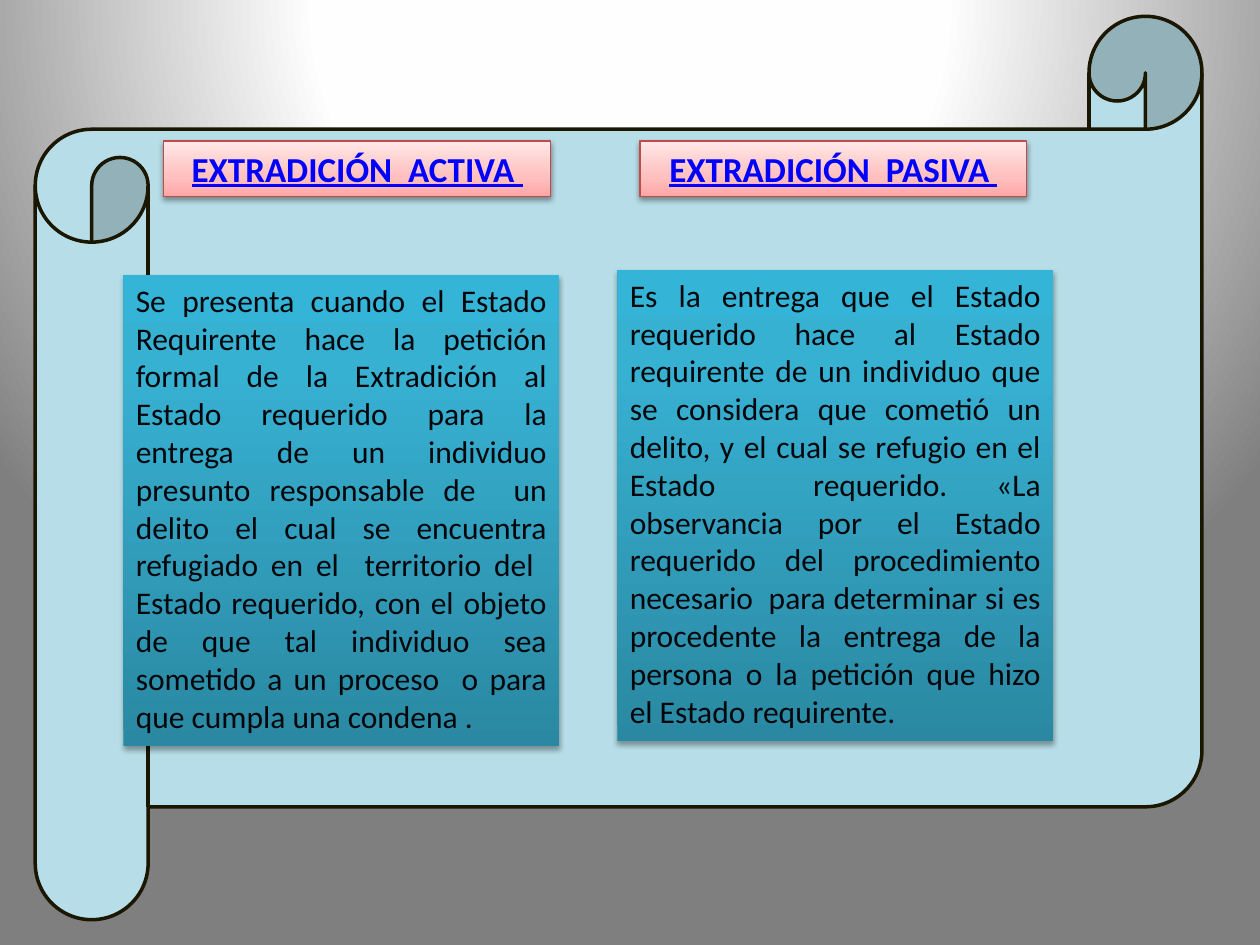
"""Build a slide that contrasts active and passive extradition on a scroll."""
from dataclasses import dataclass

from lxml.etree import SubElement
from pptx import Presentation
from pptx.dml.color import RGBColor
from pptx.enum.shapes import MSO_SHAPE
from pptx.enum.text import MSO_ANCHOR, MSO_AUTO_SIZE, PP_ALIGN
from pptx.oxml.ns import qn
from pptx.util import Inches, Pt


@dataclass(frozen=True)
class Theme:
    """Colours and type sizes of the slide."""
    font: str = "Calibri"
    heading_size: float = 20
    body_size: float = 18
    heading_color: str = "0000FF"
    heading_outline: str = "054697"
    body_color: str = "03070C"
    scroll_fill: str = "B7DEE8"
    scroll_line: str = "1A1600"
    heading_border: str = "BF4C48"
    shadow: str = "000000"
    backdrop: tuple = ((0, "FFFFFF"), (40, "FEFEFE"), (100, "7F7F7F"))
    heading_fill: tuple = ((0, "FFA6A5"), (35, "FFC0BF"), (100, "FFE7E7"))
    body_fill: tuple = ((0, "2A88A2"), (80, "37B1D2"), (100, "34B4D6"))


THEME = Theme()

ACTIVE = (
    "Se presenta cuando el Estado Requirente hace la petición formal de la "
    "Extradición al Estado requerido para la entrega de un individuo presunto "
    "responsable de  un delito el cual se encuentra refugiado en el  territorio "
    "del  Estado requerido, con el objeto de que tal individuo sea sometido a un "
    "proceso  o para que cumpla una condena . "
)
PASSIVE = (
    "Es la entrega que el Estado requerido hace al Estado requirente de un "
    "individuo que se considera que cometió un delito, y el cual se refugio en el "
    "Estado  requerido. «La observancia por el Estado requerido del procedimiento "
    "necesario  para determinar si es procedente la entrega de la persona o la "
    "petición que hizo el Estado requirente. "
)


def add_node(parent, tag, **attributes):
    """Append a DrawingML element and return it."""
    return SubElement(parent, qn(f"a:{tag}"), {k: str(v) for k, v in attributes.items()})


def set_gradient(fill, element, stops, circular=False):
    """Give a fill its colour stops, running upwards or around a circle."""
    fill.gradient()
    gradient = element.find(f".//{qn('a:gradFill')}")
    for child in list(gradient):
        gradient.remove(child)
    stop_list = add_node(gradient, "gsLst")
    for position, color in stops:
        add_node(add_node(stop_list, "gs", pos=position * 1000), "srgbClr", val=color)
    if circular:
        circle = add_node(gradient, "path", path="circle")
        add_node(circle, "fillToRect", l=50000, t=-80000, r=50000, b=180000)
    else:
        add_node(gradient, "lin", ang=270 * 60000, scaled=0)


def add_shadow(panel, opacity, distance):
    """Cast a soft shadow straight down."""
    effects = panel.element.spPr.find(qn("a:effectLst"))
    shadow = add_node(effects, "outerShdw", blurRad=Pt(3.1), dist=Pt(distance),
                      dir=90 * 60000, rotWithShape=0)
    color = add_node(shadow, "srgbClr", val=THEME.shadow)
    add_node(color, "alpha", val=opacity * 1000)


def add_outline(run, color):
    """Draw a thin line around the letters of a run."""
    properties = run.font._element
    outline = add_node(properties, "ln", w=Pt(1))
    add_node(add_node(outline, "solidFill"), "srgbClr", val=color)
    properties.insert(0, outline)


def write_text(panel, text, *, size, color, align, bold=False, underline=False, outline=None):
    """Write one formatted paragraph in a panel."""
    frame = panel.text_frame
    frame.word_wrap = True
    frame.auto_size = MSO_AUTO_SIZE.SHAPE_TO_FIT_TEXT
    frame.vertical_anchor = MSO_ANCHOR.TOP
    paragraph = frame.paragraphs[0]
    paragraph.alignment = align
    run = paragraph.add_run()
    run.text = text
    run.font.name = THEME.font
    run.font.size = Pt(size)
    run.font.bold = bold
    run.font.underline = underline
    run.font.color.rgb = RGBColor.from_string(color)
    if outline:
        add_outline(run, outline)


def add_block(slide, kind, left, top, width, height, line=None, weight=0.75):
    """Add a preset shape without shadow and with an optional border."""
    block = slide.shapes.add_shape(kind, Inches(left), Inches(top), Inches(width), Inches(height))
    block.shadow.inherit = False
    if line:
        block.line.color.rgb = RGBColor.from_string(line)
        block.line.width = Pt(weight)
    else:
        block.line.fill.background()
    return block


def add_scroll(slide):
    """Add the parchment behind the text."""
    scroll = add_block(slide, MSO_SHAPE.HORIZONTAL_SCROLL, 0.28, 0.13, 9.26, 7.17,
                       line=THEME.scroll_line, weight=2)
    scroll.fill.solid()
    scroll.fill.fore_color.rgb = RGBColor.from_string(THEME.scroll_fill)


def add_heading(slide, text, left):
    """Add the title box of a column."""
    heading = add_block(slide, MSO_SHAPE.RECTANGLE, left, 1.12, 3.07, 0.44,
                        line=THEME.heading_border)
    set_gradient(heading.fill, heading.element, THEME.heading_fill)
    add_shadow(heading, opacity=38, distance=1.6)
    write_text(heading, text, size=THEME.heading_size, color=THEME.heading_color,
               align=PP_ALIGN.CENTER, bold=True, underline=True,
               outline=THEME.heading_outline)


def add_definition(slide, text, left, top):
    """Add the explanation box of a column."""
    definition = add_block(slide, MSO_SHAPE.RECTANGLE, left, top, 3.46, 3.74)
    set_gradient(definition.fill, definition.element, THEME.body_fill)
    add_shadow(definition, opacity=35, distance=1.8)
    write_text(definition, text, size=THEME.body_size, color=THEME.body_color,
               align=PP_ALIGN.JUSTIFY)


def main():
    """Assemble and save the slide."""
    deck = Presentation()
    deck.slide_width, deck.slide_height = Inches(10), Inches(7.5)
    slide = deck.slides.add_slide(deck.slide_layouts[6])
    set_gradient(slide.background.fill, slide.element, THEME.backdrop, circular=True)
    add_scroll(slide)
    add_heading(slide, "EXTRADICIÓN  ACTIVA ", left=1.3)
    add_definition(slide, ACTIVE, left=0.98, top=2.18)
    add_heading(slide, "EXTRADICIÓN  PASIVA ", left=5.08)
    add_definition(slide, PASSIVE, left=4.9, top=2.14)
    deck.save("out.pptx")


if __name__ == "__main__":
    main()
